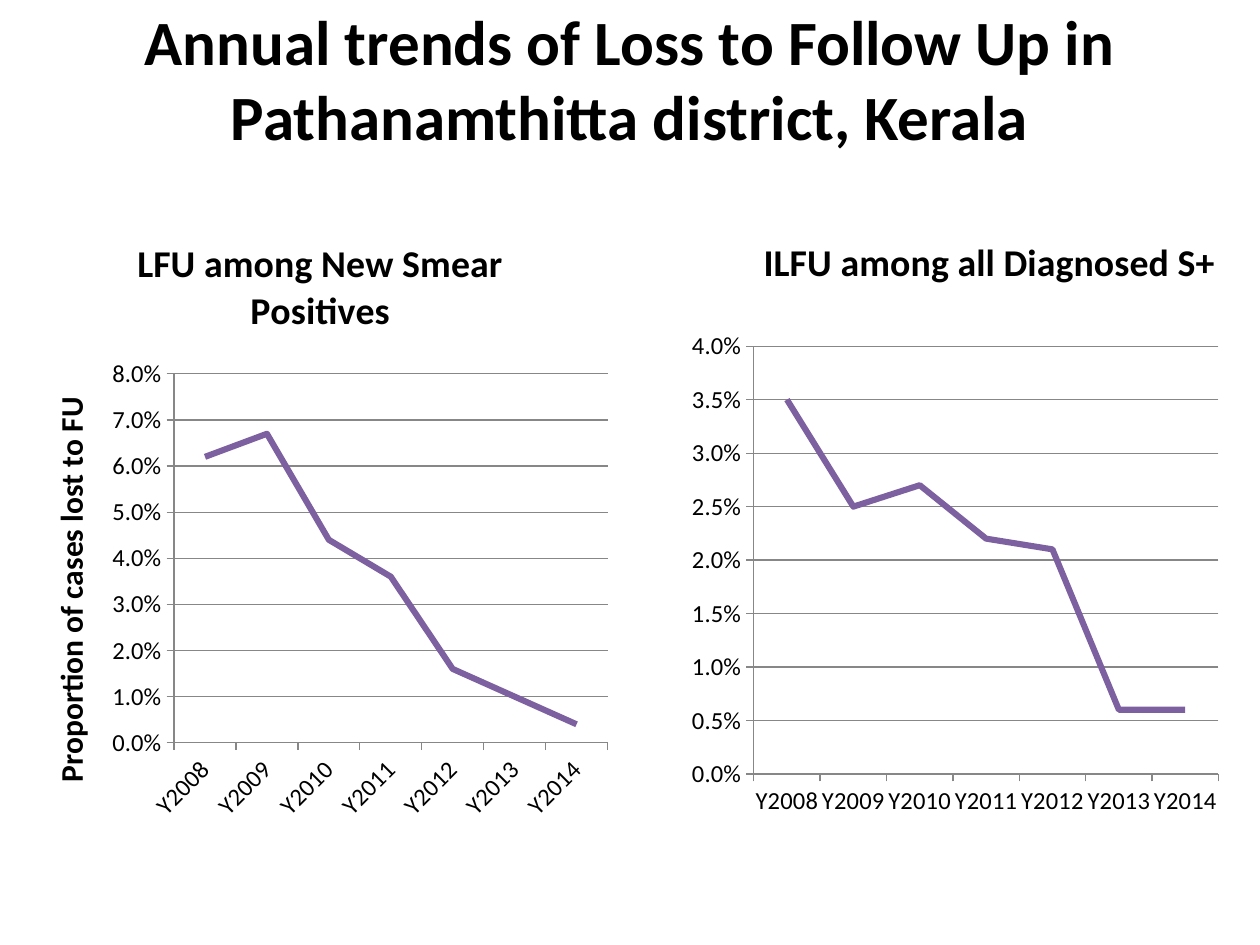
from dataclasses import dataclass
from typing import Optional

from lxml.etree import SubElement
from pptx import Presentation
from pptx.chart.data import CategoryChartData
from pptx.dml.color import RGBColor
from pptx.enum.chart import XL_CHART_TYPE, XL_TICK_MARK
from pptx.enum.text import MSO_ANCHOR, MSO_AUTO_SIZE, PP_ALIGN
from pptx.oxml.ns import qn
from pptx.util import Cm, Pt

FACE = "Calibri"
BLACK = RGBColor(0x00, 0x00, 0x00)
GREY = RGBColor(0x87, 0x87, 0x87)
PURPLE = RGBColor(0x7D, 0x60, 0xA0)
YEARS = [f"Y{year}" for year in range(2008, 2015)]


@dataclass
class Trend:
    title: str
    left: float
    width: float
    height: float
    rates: list[float]
    top: float  # axis maximum
    step: float
    label: Optional[str] = None
    plot: Optional[dict[str, float]] = None
    head: Optional[dict[str, float]] = None


TRENDS = [
    Trend("LFU among New Smear Positives", 0.42, 12.07, 12.57,
          [0.062, 0.067, 0.044, 0.036, 0.016, 0.01, 0.004], 0.08, 0.01,
          label="Proportion of cases lost to FU"),
    Trend("ILFU among all Diagnosed S+", 13.12, 11.86, 12.5,
          [0.035, 0.025, 0.027, 0.022, 0.021, 0.006, 0.006], 0.04, 0.005,
          plot={"x": 0.175, "y": 0.22, "w": 0.79, "h": 0.69},
          head={"x": 0.18, "y": 0.03}),
]


def style(font, size: float, bold: bool = False) -> None:
    font.name, font.size, font.bold = FACE, Pt(size), bold
    font.color.rgb = BLACK


def write(frame, text: str, size: float) -> None:
    frame.text = text
    style(frame.paragraphs[0].font, size, True)


def place(node, spots: dict[str, float], inner: bool = False) -> None:
    """Give a chart part a manual layout, in fractions of the chart."""
    layout = node.find(qn("c:layout"))
    if layout is None:
        layout = SubElement(node, qn("c:layout"))
        if inner:
            node.insert(0, layout)
        else:
            node.find(qn("c:tx")).addnext(layout)
    manual = SubElement(layout, qn("c:manualLayout"))
    if inner:
        SubElement(manual, qn("c:layoutTarget")).set("val", "inner")
    for key in "xy":
        SubElement(manual, qn(f"c:{key}Mode")).set("val", "edge")
    for key, value in spots.items():
        SubElement(manual, qn(f"c:{key}")).set("val", str(value))


def draw(slide, trend: Trend) -> None:
    data = CategoryChartData(number_format="0.0%")
    data.categories = YEARS
    data.add_series("Series 1", trend.rates)
    chart = slide.shapes.add_chart(
        XL_CHART_TYPE.LINE, Cm(trend.left), Cm(4.23),
        Cm(trend.width), Cm(trend.height), data).chart
    style(chart.font, 18)
    chart.has_legend = False
    write(chart.chart_title.text_frame, trend.title, 21.6)
    chart.chart_title.include_in_layout = False

    # Axes and gridlines
    for axis in (chart.category_axis, chart.value_axis):
        style(axis.tick_labels.font, 14)
        axis.major_tick_mark = XL_TICK_MARK.OUTSIDE
        axis.minor_tick_mark = XL_TICK_MARK.NONE
        axis.format.line.color.rgb = GREY
        axis.format.line.width = Pt(0.75)
    scale = chart.value_axis
    scale.minimum_scale, scale.maximum_scale = 0, trend.top
    scale.major_unit = trend.step
    scale.tick_labels.number_format = "0.0%"
    scale.tick_labels.number_format_is_linked = False
    scale.has_major_gridlines = True
    scale.major_gridlines.format.line.color.rgb = GREY
    scale.major_gridlines.format.line.width = Pt(0.75)
    if trend.label:
        write(scale.axis_title.text_frame, trend.label, 18)

    # Line
    plot = chart.plots[0]
    plot.vary_by_categories = False
    line = plot.series[0]
    line.smooth = False
    line.format.line.color.rgb = PURPLE
    line.format.line.width = Pt(3.5)

    # Manual positions
    if trend.plot:
        area = chart.element.find(".//" + qn("c:plotArea"))
        place(area, trend.plot, inner=True)
    if trend.head:
        place(chart.element.find(".//" + qn("c:title")), trend.head)


def main() -> None:
    deck = Presentation()
    deck.slide_width, deck.slide_height = Cm(25.4), Cm(19.05)
    slide = deck.slides.add_slide(deck.slide_layouts[5])

    # Title, raised by a deep bottom margin
    title = slide.shapes.title
    title.left, title.top = Cm(0), Cm(0.64)
    title.width, title.height = Cm(25.4), Cm(3.38)
    frame = title.text_frame
    write(frame, "Annual trends of Loss to Follow Up in "
          "Pathanamthitta district, Kerala", 36)
    frame.paragraphs[0].alignment = PP_ALIGN.CENTER
    frame.vertical_anchor = MSO_ANCHOR.MIDDLE
    frame.auto_size = MSO_AUTO_SIZE.NONE
    frame.word_wrap = True
    frame.margin_bottom = Cm(1.65)

    # Charts
    for trend in TRENDS:
        draw(slide, trend)
    deck.save("out.pptx")


if __name__ == "__main__":
    main()
